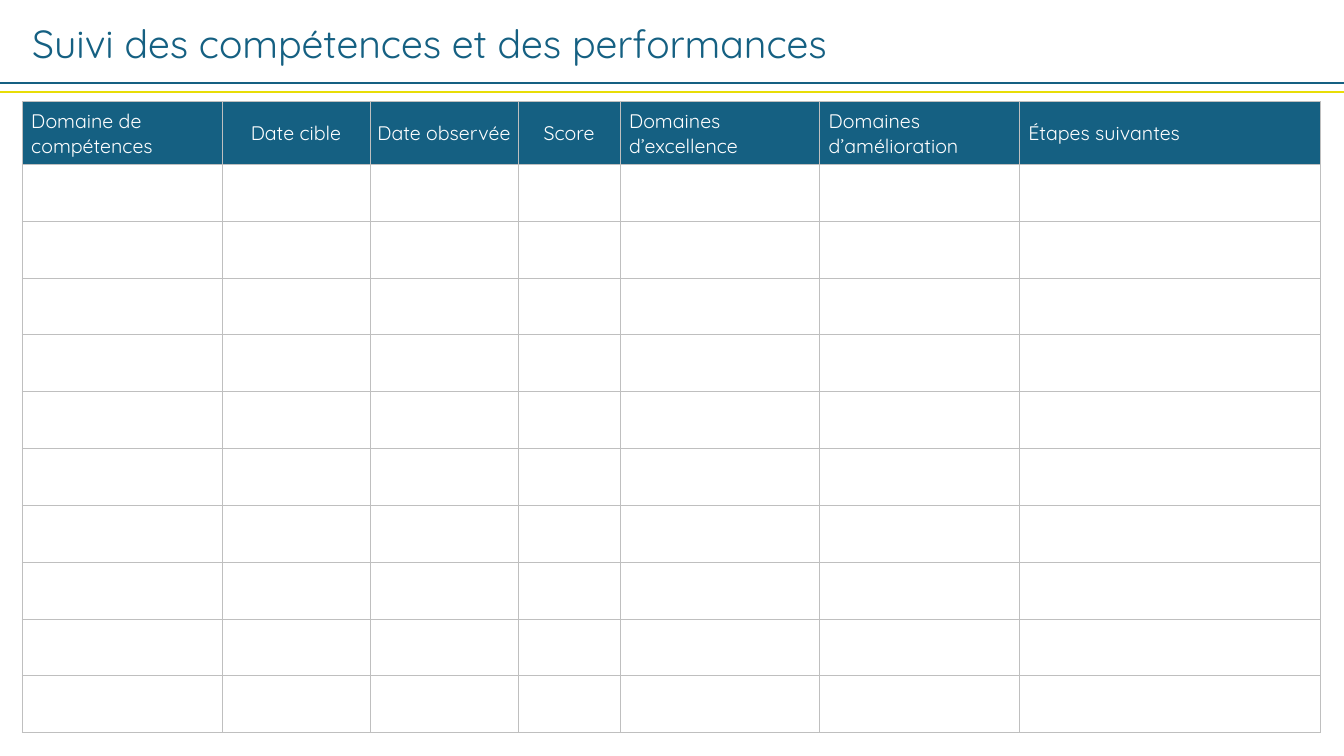
import pptx
import pptx.dml.color
import pptx.enum.shapes
import pptx.enum.text
import pptx.oxml.ns
import pptx.util
from lxml import etree

Inches = pptx.util.Inches
RGBColor = pptx.dml.color.RGBColor
Align = pptx.enum.text.PP_ALIGN
BLUE = RGBColor(0x15, 0x60, 0x82)
YELLOW = RGBColor(0xE8, 0xDD, 0x06)
GREY = RGBColor(0xBF, 0xBF, 0xBF)
WHITE = RGBColor(0xFF, 0xFF, 0xFF)

WIDTH = 13.33
ROWS = 10
HEADS = [
    ("Domaine de compétences", 1.98, Align.LEFT),
    ("Date cible", 1.47, Align.CENTER),
    ("Date observée", 1.47, Align.CENTER),
    ("Score", 1.01, Align.CENTER),
    ("Domaines d’excellence", 1.98, Align.LEFT),
    ("Domaines d’amélioration", 1.98, Align.LEFT),
    ("Étapes suivantes", 2.99, Align.LEFT),
]


def assign(item, values):
    for name, value in values.items():
        setattr(item, name, value)


class Page:
    """Draws the elements of one slide in a shared style."""

    def __init__(self, slide, face):
        self.shapes = slide.shapes
        self.face = face

    def label(self, frame, text, size, color, align=Align.LEFT):
        para = frame.paragraphs[0]
        para.alignment = align
        run = para.add_run()
        run.text = text
        assign(run.font, {"name": self.face, "size": pptx.util.Pt(size), "bold": False})
        run.font.color.rgb = color

    def title(self, text, box):
        frame = self.shapes.add_textbox(*map(Inches, box)).text_frame
        assign(frame, {"word_wrap": True,
                       "auto_size": pptx.enum.text.MSO_AUTO_SIZE.SHAPE_TO_FIT_TEXT})
        self.label(frame, text, 28, BLUE)

    def rule(self, top, color):
        line = self.shapes.add_connector(pptx.enum.shapes.MSO_CONNECTOR.STRAIGHT,
                                         0, Inches(top), Inches(WIDTH), Inches(top))
        line.line.color.rgb = color
        line.line.width = pptx.util.Pt(1.5)
        etree.SubElement(line._element.spPr, pptx.oxml.ns.qn("a:effectLst"))

    def border(self, cell):
        qn = pptx.oxml.ns.qn
        props = cell._tc.get_or_add_tcPr()
        for side in "LRTB":
            edge = etree.SubElement(props, qn(f"a:ln{side}"), w=str(pptx.util.Pt(0.5)))
            fill = etree.SubElement(edge, qn("a:solidFill"))
            etree.SubElement(fill, qn("a:srgbClr"), val=str(GREY))

    def cell(self, cell, color):
        self.border(cell)
        cell.fill.solid()
        cell.fill.fore_color.rgb = color

    def head(self, cell, text, align):
        left = 0.09 if align == Align.LEFT else 0.01
        assign(cell, {
            "margin_left": Inches(left),
            "margin_right": Inches(0.01),
            "margin_top": Inches(0.01),
            "margin_bottom": 0,
            "vertical_anchor": pptx.enum.text.MSO_ANCHOR.MIDDLE,
        })
        self.label(cell.text_frame, text, 14, WHITE, align)

    def table(self, heads, count, box):
        table = self.shapes.add_table(count + 1, len(heads), *map(Inches, box)).table
        assign(table, {"first_row": False, "horz_banding": False})
        top = 0.62
        for index, row in enumerate(table.rows):
            row.height = Inches((box[3] - top) / count if index else top)
            for cell in row.cells:
                self.cell(cell, WHITE if index else BLUE)
        for index, (text, width, align) in enumerate(heads):
            table.columns[index].width = Inches(width)
            self.head(table.cell(0, index), text, align)


def main():
    deck = pptx.Presentation()
    assign(deck, {"slide_width": Inches(WIDTH), "slide_height": Inches(7.5)})
    page = Page(deck.slides.add_slide(deck.slide_layouts[6]), "Quicksand")
    page.title("Suivi des compétences et des performances", (0.22, 0.14, 10.85, 0.57))
    page.rule(0.82, BLUE)
    page.rule(0.91, YELLOW)
    page.table(HEADS, ROWS, (0.22, 1.01, 12.88, 6.26))
    deck.save("out.pptx")


if __name__ == "__main__":
    main()
